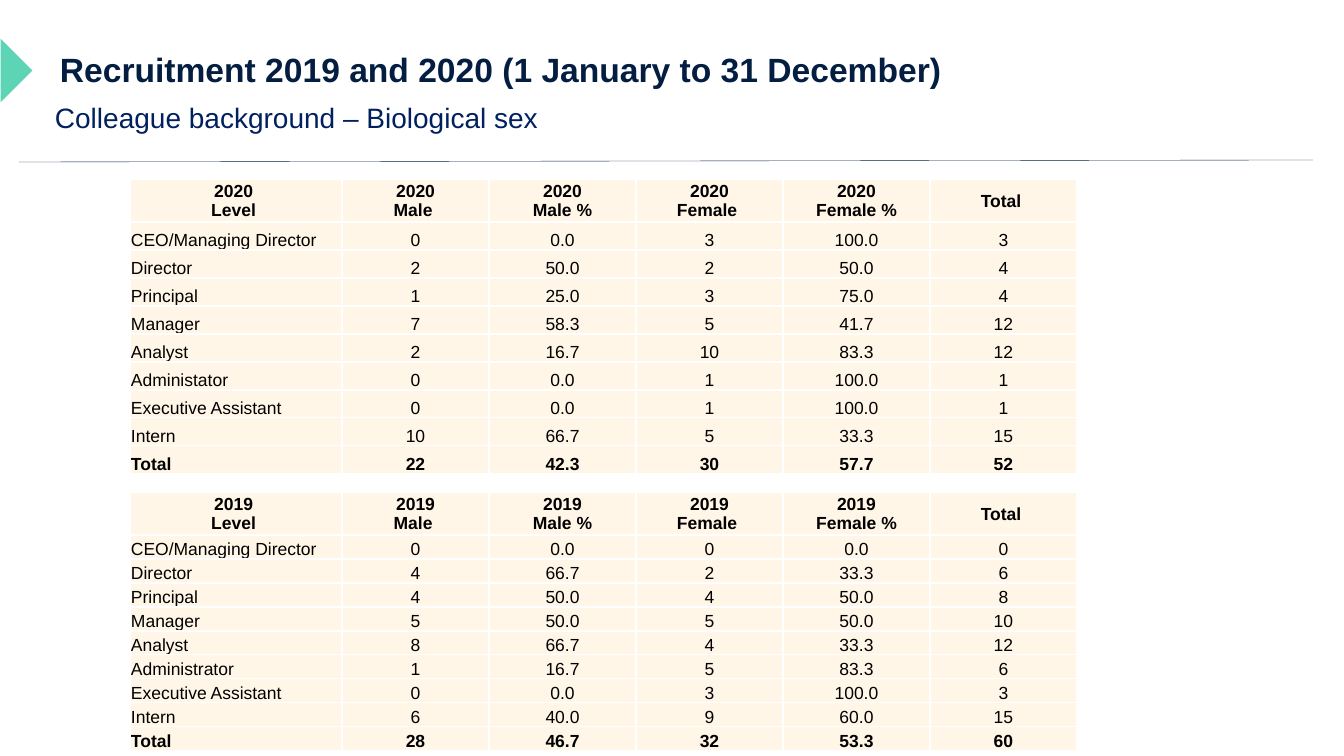
from lxml.etree import SubElement
from pptx import Presentation
from pptx.dml.color import RGBColor
from pptx.enum.shapes import MSO_CONNECTOR, MSO_SHAPE
from pptx.enum.text import MSO_ANCHOR, PP_ALIGN
from pptx.oxml.ns import qn
from pptx.util import Emu, Pt

PX = 914400 / 100.8
NAVY = "041E42"
COLUMN_WIDTHS = [212] + [147] * 5

RECRUITS_2020 = [
    ("CEO/Managing Director", "0", "0.0", "3", "100.0", "3"),
    ("Director", "2", "50.0", "2", "50.0", "4"),
    ("Principal", "1", "25.0", "3", "75.0", "4"),
    ("Manager", "7", "58.3", "5", "41.7", "12"),
    ("Analyst", "2", "16.7", "10", "83.3", "12"),
    ("Administator", "0", "0.0", "1", "100.0", "1"),
    ("Executive Assistant", "0", "0.0", "1", "100.0", "1"),
    ("Intern", "10", "66.7", "5", "33.3", "15"),
    ("Total", "22", "42.3", "30", "57.7", "52"),
]
RECRUITS_2019 = [
    ("CEO/Managing Director", "0", "0.0", "0", "0.0", "0"),
    ("Director", "4", "66.7", "2", "33.3", "6"),
    ("Principal", "4", "50.0", "4", "50.0", "8"),
    ("Manager", "5", "50.0", "5", "50.0", "10"),
    ("Analyst", "8", "66.7", "4", "33.3", "12"),
    ("Administrator", "1", "16.7", "5", "83.3", "6"),
    ("Executive Assistant", "0", "0.0", "3", "100.0", "3"),
    ("Intern", "6", "40.0", "9", "60.0", "15"),
    ("Total", "28", "46.7", "32", "53.3", "60"),
]


def px(length):
    return Emu(round(length * PX))


def rgb(value):
    return RGBColor.from_string(value)


def add_run(paragraph, text, size, color, bold=False):
    run = paragraph.add_run()
    run.text = text
    run.font.name = "Arial"
    run.font.size = Pt(size)
    run.font.bold = bold
    run.font.color.rgb = rgb(color)


def add_heading(slide, box, text, size, color, bold=False, anchor=MSO_ANCHOR.TOP):
    frame = slide.shapes.add_textbox(*map(px, box)).text_frame
    frame.word_wrap = True
    frame.vertical_anchor = anchor
    paragraph = frame.paragraphs[0]
    paragraph.line_spacing = 0.9
    add_run(paragraph, text, size, color, bold)


def add_marker(slide):
    marker = slide.shapes.add_shape(
        MSO_SHAPE.RIGHT_TRIANGLE, px(-22), px(48), px(45), px(45))
    marker.rotation = 225
    marker.shadow.inherit = False
    marker.fill.solid()
    marker.fill.fore_color.rgb = rgb("5CD4B5")
    marker.line.fill.background()


def add_rule(slide):
    rule = slide.shapes.add_connector(
        MSO_CONNECTOR.STRAIGHT, px(19), px(162), px(1313), px(160))
    rule.line.color.rgb = rgb(NAVY)
    rule.line.width = Pt(0.25)
    SubElement(rule._element.spPr, qn("a:effectLst"))


def add_borders(cell):
    properties = cell._tc.get_or_add_tcPr()
    for side in ("a:lnL", "a:lnR", "a:lnT", "a:lnB"):
        border = SubElement(properties, qn(side), w=str(Pt(1)))
        fill = SubElement(border, qn("a:solidFill"))
        SubElement(fill, qn("a:srgbClr"), val="FFFFFF")


def fill_cell(cell, text, bold, align, anchor):
    add_borders(cell)
    cell.fill.solid()
    cell.fill.fore_color.rgb = rgb("FFF6E7")
    cell.margin_left = cell.margin_right = cell.margin_top = px(1)
    cell.margin_bottom = 0
    cell.vertical_anchor = anchor
    paragraph = cell.text_frame.paragraphs[0]
    paragraph.alignment = align
    for number, line in enumerate(text.split("\n")):
        if number:
            paragraph.add_line_break()
        add_run(paragraph, line, 12.5, "000000", bold)


def add_recruitment_table(slide, year, levels, top, row_height):
    header = (f"{year} \nLevel ", f"{year}\nMale ", f"{year}\nMale %",
              f"{year}\nFemale ", f"{year}\nFemale %", "Total ")
    rows = [header, *levels]
    table = slide.shapes.add_table(
        len(rows), len(header), px(130), px(top),
        px(sum(COLUMN_WIDTHS)), px(row_height * len(rows))).table
    table.first_row = table.horz_banding = False
    for column, width in zip(table.columns, COLUMN_WIDTHS):
        column.width = px(width)
    for r, row in enumerate(rows):
        table.rows[r].height = px(row_height)
        is_header = r == 0
        bold = is_header or row[0] == "Total"
        anchor = MSO_ANCHOR.MIDDLE if is_header else MSO_ANCHOR.BOTTOM
        for c, text in enumerate(row):
            align = PP_ALIGN.CENTER if is_header or c else PP_ALIGN.LEFT
            fill_cell(table.cell(r, c), text, bold, align, anchor)


def main():
    deck = Presentation()
    deck.slide_width, deck.slide_height = px(1344), px(756)
    slide = deck.slides.add_slide(deck.slide_layouts[6])
    add_marker(slide)
    add_rule(slide)
    add_heading(slide, (50, 40, 973, 64),
                "Recruitment 2019 and 2020 (1 January to 31 December)",
                24, NAVY, bold=True, anchor=MSO_ANCHOR.MIDDLE)
    add_heading(slide, (45, 99, 897, 40),
                "Colleague background – Biological sex", 20, "002060")
    add_recruitment_table(slide, 2019, RECRUITS_2019, top=492, row_height=24)
    add_recruitment_table(slide, 2020, RECRUITS_2020, top=179, row_height=28)
    deck.save("out.pptx")


if __name__ == "__main__":
    main()
